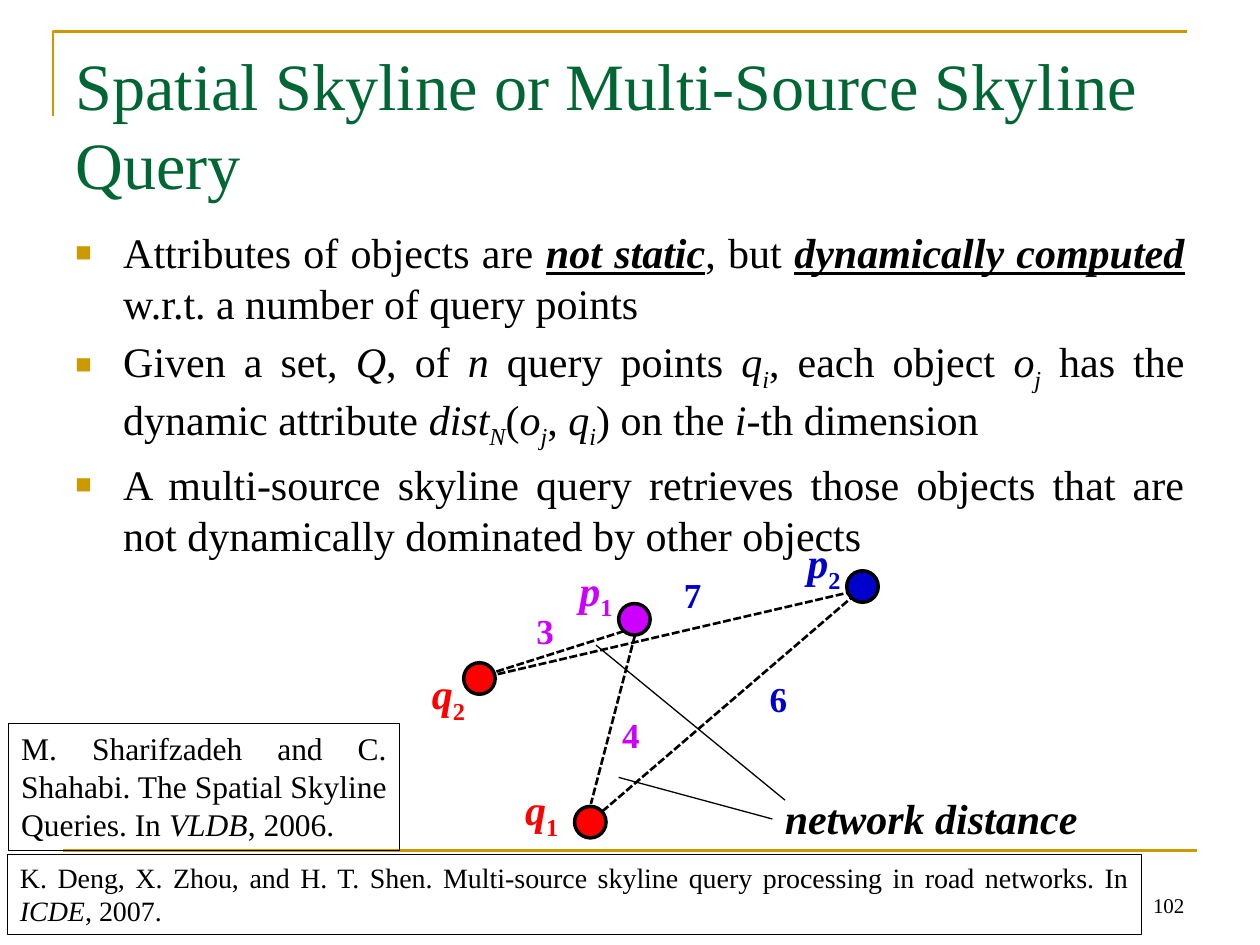
from pptx import Presentation, util as u
from pptx.dml.color import RGBColor
from pptx.enum import dml, shapes, text
from pptx.oxml.ns import qn
from lxml import etree

FONT = "Times New Roman"
GOLD, GREEN, BLACK = "CC9900", "006633", "000000"
RED, PINK, BLUE = "FF0000", "CC00FF", "0000CC"
LEFT, RIGHT, JUST = text.PP_ALIGN.LEFT, text.PP_ALIGN.RIGHT, text.PP_ALIGN.JUSTIFY
TOP, LOW = text.MSO_ANCHOR.TOP, text.MSO_ANCHOR.BOTTOM
DOT = 0.25

# Each run is (text, flags): b bold, i italic, u underlined, s subscript
POINTS = [
    [("Attributes of objects are ", ""), ("not static", "biu"), (", but ", ""),
     ("dynamically computed", "biu"), (" w.r.t. a number of query points", "")],
    [("Given a set, ", ""), ("Q", "i"), (", of ", ""), ("n", "i"),
     (" query points ", ""), ("q", "i"), ("i", "is"), (", each object ", ""),
     ("o", "i"), ("j", "is"), (" has the dynamic attribute ", ""),
     ("dist", "i"), ("N", "is"), ("(", ""), ("o", "i"), ("j", "is"), (", ", ""),
     ("q", "i"), ("i", "is"), (") on the ", ""), ("i", "i"), ("-th dimension", "")],
    [("A multi-source skyline query retrieves those objects that are "
      "not dynamically dominated by other objects", "")],
]
# Boxed references: place, size, runs
REFS = [
    ((0.06, 6.78, 9, 0.64), 16,
     [("K. Deng, X. Zhou, and H. T. Shen. Multi-source skyline query "
       "processing in road networks. In ", ""), ("ICDE", "i"), (", 2007.", "")]),
    ((0.07, 5.74, 3.1, 1.01), 18,
     [("M. Sharifzadeh and C. Shahabi. The Spatial Skyline Queries. In ", ""),
      ("VLDB", "i"), (", 2006.", "")]),
]
# Graph nodes: letter, index, colour, dot corner, label corner
NODES = [
    ("p", "1", PINK, (4.91, 4.79), (4.5, 4.43)),
    ("q", "1", RED, (4.56, 6.4), (4.07, 6.17)),
    ("q", "2", RED, (3.68, 5.26), (3.33, 5.25)),
    ("p", "2", BLUE, (6.72, 4.53), (6.31, 4.21)),
]
# Graph edges: from, to, distance, colour, label corner
EDGES = [
    ((3.94, 5.33), (4.95, 5.01), "3", PINK, (4.16, 4.79)),
    ((5.04, 5.04), (4.69, 6.38), "4", PINK, (4.84, 5.61)),
    ((3.95, 5.35), (6.79, 4.69), "7", BLUE, (5.33, 4.5)),
    ((4.78, 6.44), (6.75, 4.75), "6", BLUE, (6.01, 5.33)),
]
CALLS = [((4.91, 6.17), (6.13, 6.5)), ((4.73, 5.12), (6.23, 6.35))]


def rgb(code):
    return RGBColor.from_string(code)


def inch(nums):
    return [u.Inches(n) for n in nums]


def write(shape, paras, size=24, color=BLACK, align=LEFT, anchor=TOP,
          wrap=True, mark=False):
    frame = shape.text_frame
    frame.auto_size = text.MSO_AUTO_SIZE.NONE
    frame.word_wrap = wrap
    frame.vertical_anchor = anchor
    for n, runs in enumerate(paras):
        para = frame.add_paragraph() if n else frame.paragraphs[0]
        para.alignment = align
        if mark:
            bullet(para, size)
        for words, flags in runs:
            run = para.add_run()
            run.text = words
            font = run.font
            font.name, font.size = FONT, u.Pt(size)
            font.color.rgb = rgb(color)
            font.bold, font.italic = "b" in flags, "i" in flags
            font.underline = "u" in flags
            if "s" in flags:
                run._r.get_or_add_rPr().set("baseline", "-25000")


def bullet(para, size):
    para.space_before = u.Pt(size * 0.2)
    props = para._p.get_or_add_pPr()
    props.set("marL", str(u.Inches(0.38)))
    props.set("indent", str(u.Inches(-0.38)))
    tint = etree.SubElement(props, qn("a:buClr"))
    etree.SubElement(tint, qn("a:srgbClr"), val=GOLD)
    etree.SubElement(props, qn("a:buSzPct"), val="65000")
    etree.SubElement(props, qn("a:buFont"), typeface=FONT)
    etree.SubElement(props, qn("a:buChar"), char="■")


def label(slide, place, paras, **form):
    write(slide.shapes.add_textbox(*inch(place)), paras, **form)


def line(slide, start, end, color=BLACK, width=0.75, dash=None):
    item = slide.shapes.add_connector(
        shapes.MSO_CONNECTOR.STRAIGHT, *inch(start + end))
    item.line.color.rgb = rgb(color)
    item.line.width = u.Pt(width)
    if dash:
        item.line.dash_style = dash
    etree.SubElement(item._element.spPr, qn("a:effectLst"))


def shape(slide, kind, place, fill=None, width=0.75):
    item = slide.shapes.add_shape(kind, *inch(place))
    item.shadow.inherit = False
    if fill:
        item.fill.solid()
        item.fill.fore_color.rgb = rgb(fill)
    else:
        item.fill.background()
    item.line.color.rgb = rgb(BLACK)
    item.line.width = u.Pt(width)
    return item


def frame(slide):
    # Corner rule above the title and rule above the footer
    pen = slide.shapes.build_freeform(*inch((0.42, 0.92)), scale=1.0)
    pen.add_line_segments([inch((0.42, 0.25)), inch((9.42, 0.25))], close=False)
    rule = pen.convert_to_shape()
    rule.shadow.inherit = False
    rule.fill.background()
    rule.line.color.rgb = rgb(GOLD)
    rule.line.width = u.Pt(1.5)
    line(slide, (0.5, 6.75), (9.5, 6.75), GOLD, 1.5)


def head(slide):
    title = slide.shapes.title
    title.left, title.top, title.width, title.height = inch((0.5, 0.3, 9, 1.25))
    write(title, [[("Spatial Skyline or Multi-Source Skyline Query", "")]],
          size=37.8, color=GREEN)


def graph(slide):
    for start, end, dist, color, spot in EDGES:
        line(slide, start, end, width=1.5, dash=dml.MSO_LINE.SQUARE_DOT)
        label(slide, spot + (0.34, 0.44), [[(dist, "b")]],
              size=20, color=color, wrap=False)
    for name, index, color, dot, spot in NODES:
        shape(slide, shapes.MSO_SHAPE.OVAL, dot + (DOT, DOT), color, 2)
        label(slide, spot + (0.48, 0.5), [[(name, "bi"), (index, "bs")]],
              color=color, wrap=False)
    # Callout for the dashed edges
    for start, end in CALLS:
        line(slide, start, end)
    label(slide, (6.13, 6.24, 2.55, 0.5), [[("network distance", "bi")]],
          wrap=False)


def main():
    deck = Presentation()
    deck.slide_width, deck.slide_height = inch((10, 7.5))
    slide = deck.slides.add_slide(deck.slide_layouts[5])
    frame(slide)
    head(slide)
    label(slide, (0.5, 1.75, 9, 4.95), POINTS, align=JUST, mark=True)
    label(slide, (7.17, 6.83, 2.33, 0.5), [[("102", "")]],
          size=12, align=RIGHT, anchor=LOW)
    graph(slide)
    for place, size, runs in REFS:
        box = shape(slide, shapes.MSO_SHAPE.RECTANGLE, place)
        write(box, [runs], size=size, align=JUST)
    deck.save("out.pptx")


if __name__ == "__main__":
    main()
